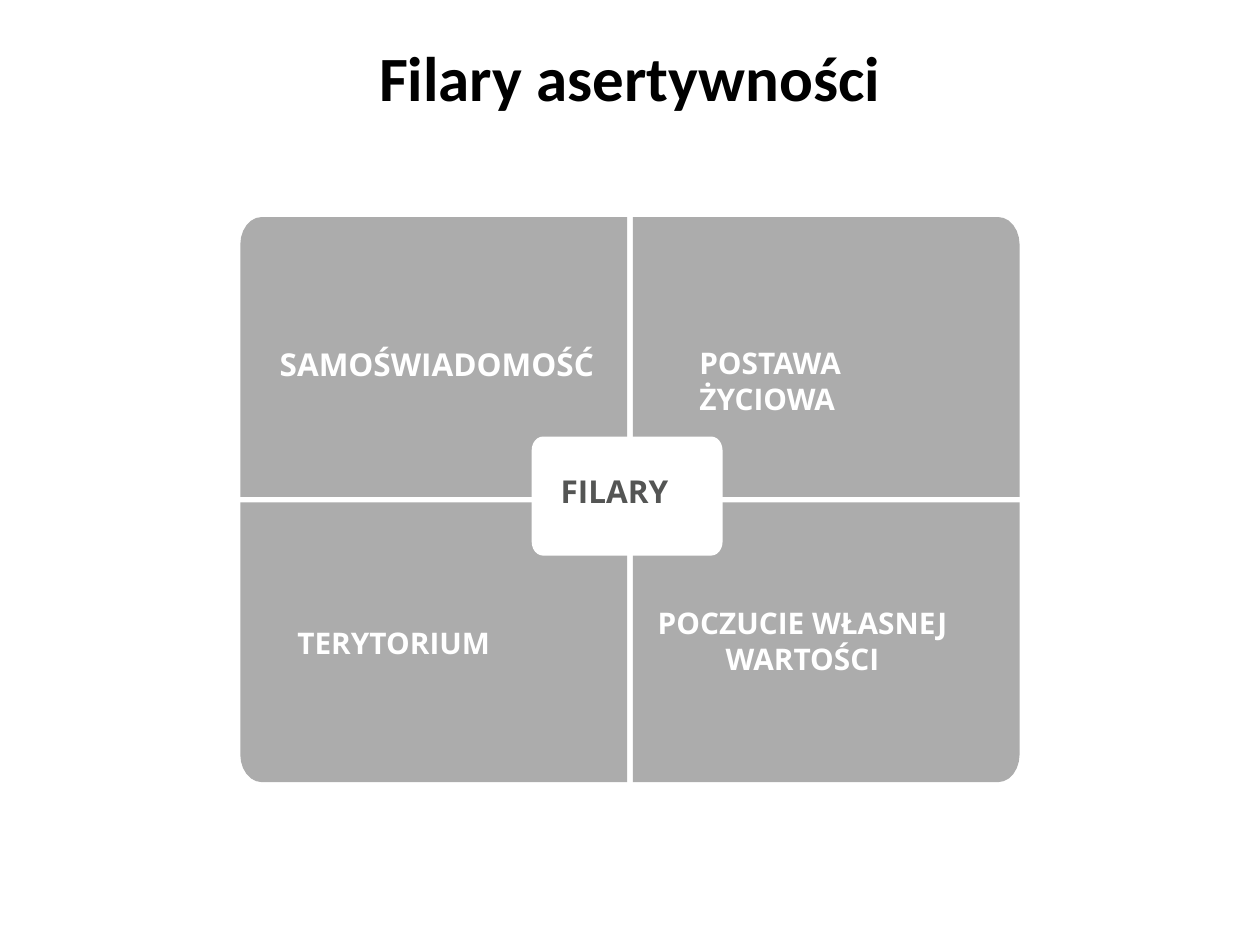
import math
from dataclasses import dataclass

import pptx
import pptx.util
import pptx.dml.color
import pptx.enum.text
import pptx.shapes.base
import pptx.slide

COLS, ROWS = 100, 75
CELL = pptx.util.Inches(0.1)
HUES = {"ink": "000000", "panel": "ACACAC", "white": "FFFFFF", "core": "545554"}
STEPS = 6


@dataclass(frozen=True)
class Box:
    """Place and size in grid columns and rows."""
    col: float
    row: float
    wide: float
    high: float


@dataclass(frozen=True)
class Label:
    text: str
    box: Box
    size: int = 17
    hue: str = "white"
    left: float = 0
    first: float = 0


MID_COL, MID_ROW, GAP = 50, 39.65, 0.45
WIDE, HIGH = 30.7, 22.2
CORE = Box(42.2, 34.65, 15.15, 9.45)
TITLE = Box(5, 3, 90, 6.1)
LABELS = [
    Label("SAMOŚWIADOMOŚĆ", Box(22.2, 27.4, 26.2, 3), size=18),
    Label("FILARY", Box(44.5, 37.5, 10.8, 3), size=18, hue="core"),
    Label("TERYTORIUM", Box(23.6, 49.6, 17.7, 2.9)),
    Label("POSTAWA ŻYCIOWA", Box(55.5, 27.4, 19.8, 5.7)),
    Label("POCZUCIE WŁASNEJ WARTOŚCI", Box(52.1, 48, 25.7, 5.7),
          left=5.5, first=-5.4),
]


def emu(cells: float) -> int:
    return round(cells * CELL)


def paint(hue: str) -> pptx.dml.color.RGBColor:
    return pptx.dml.color.RGBColor.from_string(HUES[hue])


def place(shape: pptx.shapes.base.BaseShape, box: Box) -> None:
    shape.left, shape.top = emu(box.col), emu(box.row)
    shape.width, shape.height = emu(box.wide), emu(box.high)


def write(shape: pptx.shapes.base.BaseShape, text: str, *, size: int, hue: str,
          font: str = "Open Sans", align: str = "LEFT", anchor: str = "TOP",
          left: float = 0, first: float = 0) -> None:
    """Fill a shape with one bold paragraph; left and first are indents."""
    frame = shape.text_frame
    frame.word_wrap = True
    frame.auto_size = pptx.enum.text.MSO_AUTO_SIZE.SHAPE_TO_FIT_TEXT
    frame.vertical_anchor = pptx.enum.text.MSO_ANCHOR[anchor]
    frame.margin_left = frame.margin_right = 0
    frame.margin_top = frame.margin_bottom = 0
    para = frame.paragraphs[0]
    para.alignment = pptx.enum.text.PP_ALIGN[align]
    props = para._p.get_or_add_pPr()
    props.set("marL", str(emu(left)))
    props.set("indent", str(emu(first)))
    run = para.add_run()
    run.text = text
    run.font.name, run.font.size = font, pptx.util.Pt(size)
    run.font.bold = True
    run.font.color.rgb = paint(hue)


def draw_card(slide: pptx.slide.Slide, box: Box, hue: str,
              radii: dict[tuple[int, int], tuple[float, float]]) -> None:
    """Draw a box; radii maps a corner's (x, y) signs to its two radii."""
    mid_x, mid_y = box.col + box.wide / 2, box.row + box.high / 2
    points = []
    for turn, (sx, sy) in enumerate([(1, 1), (-1, 1), (-1, -1), (1, -1)]):
        rx, ry = radii.get((sx, sy), (0, 0))
        cx = mid_x + sx * (box.wide / 2 - rx)
        cy = mid_y + sy * (box.high / 2 - ry)
        for step in range(STEPS + 1 if rx else 1):
            angle = math.pi / 2 * (turn + step / STEPS)
            points.append((emu(cx + rx * math.cos(angle)),
                           emu(cy + ry * math.sin(angle))))
    pen = slide.shapes.build_freeform(*points[0])
    pen.add_line_segments(points[1:], close=True)
    card = pen.convert_to_shape()
    card.shadow.inherit = False
    card.fill.solid()
    card.fill.fore_color.rgb = paint(hue)
    card.line.fill.background()


def draw_panels(slide: pptx.slide.Slide) -> None:
    """Draw four panels round the middle, each rounded at its outer corner."""
    for sy in (-1, 1):
        for sx in (-1, 1):
            col = MID_COL + sx * (WIDE + GAP) / 2 - WIDE / 2
            row = MID_ROW + sy * (HIGH + GAP) / 2 - HIGH / 2
            draw_card(slide, Box(col, row, WIDE, HIGH), "panel",
                      {(sx, sy): (1.7, 2.2)})


def draw_label(slide: pptx.slide.Slide, label: Label) -> None:
    shape = slide.shapes.add_textbox(0, 0, 0, 0)
    place(shape, label.box)
    write(shape, label.text, size=label.size, hue=label.hue,
          left=label.left, first=label.first)


def main() -> None:
    deck = pptx.Presentation()
    deck.slide_width, deck.slide_height = COLS * CELL, ROWS * CELL
    slide = deck.slides.add_slide(deck.slide_layouts[5])
    title = slide.shapes.title
    place(title, TITLE)
    write(title, "Filary asertywności", size=36, hue="ink", font="Calibri",
          align="CENTER", anchor="MIDDLE")
    draw_panels(slide)
    draw_card(slide, CORE, "white",
              {(sx, sy): (0.9, 1.1) for sx in (-1, 1) for sy in (-1, 1)})
    for label in LABELS:
        draw_label(slide, label)
    deck.save("out.pptx")


if __name__ == "__main__":
    main()
